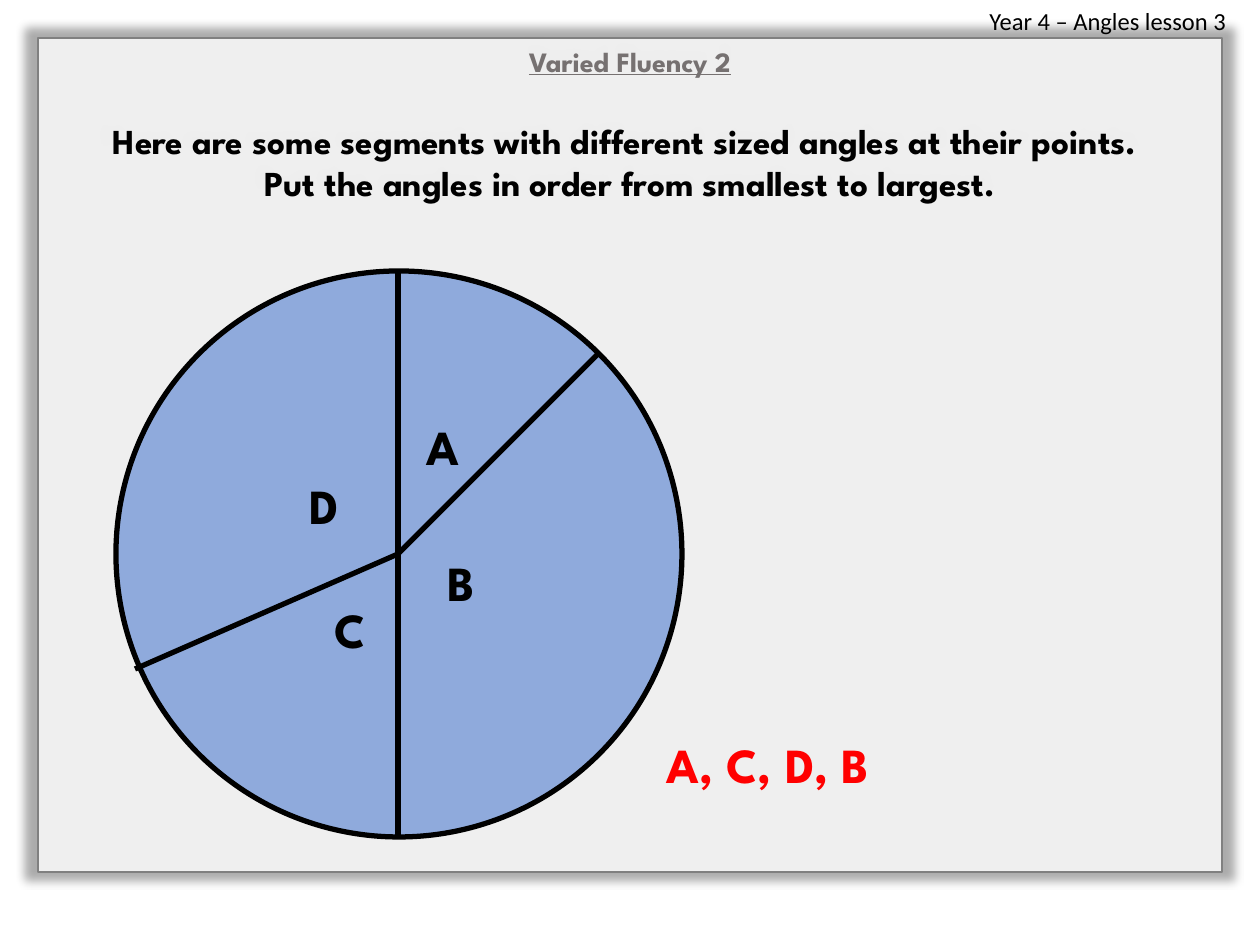
from lxml import etree
from pptx import Presentation
from pptx.dml.color import RGBColor
from pptx.enum.shapes import MSO_CONNECTOR, MSO_SHAPE
from pptx.enum.text import MSO_ANCHOR, PP_ALIGN
from pptx.oxml import parse_xml
from pptx.oxml.ns import nsdecls, qn
from pptx.util import Pt

PX = 914400 / 126
FONT = "League Spartan"


def px(*values):
    """Turn pixel lengths into a list of EMU lengths."""
    return [round(v * PX) for v in values]


def add_run(p, text, size, color, font=FONT, bold=True, underline=False):
    r = p.add_run()
    r.text = text
    r.font.size = Pt(size)
    r.font.name = font
    r.font.bold = bold
    r.font.underline = underline
    r.font.color.rgb = RGBColor.from_string(color)


prs = Presentation()
prs.slide_width, prs.slide_height = px(1260, 945)
s = prs.slides.add_slide(prs.slide_layouts[6])

# Lesson header
header = s.shapes.add_textbox(*px(977, 0, 272, 43))
header.text_frame.word_wrap = False
add_run(header.text_frame.paragraphs[0], "Year 4 – Angles lesson 3", 14, "000000",
        font="Calibri", bold=False)

# Translucent panel with a soft shadow, holding the title and question
panel = s.shapes.add_shape(MSO_SHAPE.RECTANGLE, *px(38, 38, 1184, 834))
panel.fill.solid()
panel.fill.fore_color.rgb = RGBColor.from_string("FFFFFF")
color = panel._element.spPr.find(qn("a:solidFill"))[0]
etree.SubElement(color, qn("a:alpha")).set("val", "82000")
panel.line.color.rgb = RGBColor.from_string("808080")
panel.line.width = Pt(1)
panel._element.spPr.append(parse_xml(
    f'<a:effectLst {nsdecls("a")}><a:outerShdw blurRad="63500" sx="102000" sy="102000" '
    'algn="ctr" rotWithShape="0"><a:srgbClr val="000000"><a:alpha val="40000"/>'
    '</a:srgbClr></a:outerShdw></a:effectLst>'))
tf = panel.text_frame
tf.word_wrap = True
tf.vertical_anchor = MSO_ANCHOR.TOP
title = tf.paragraphs[0]
question = tf.add_paragraph()
question.space_before = Pt(24)
task = tf.add_paragraph()
for p in tf.paragraphs:
    p.alignment = PP_ALIGN.CENTER
add_run(title, "Varied Fluency 2", 16, "767171", underline=True)
add_run(question, "Here are some segments with different sized angles at their points. ",
        20, "000000")
add_run(task, "Put the angles in order from smallest to largest.", 20, "000000")

# Circle cut into four segments
circle = s.shapes.add_shape(MSO_SHAPE.OVAL, *px(116, 271, 566, 566))
circle.shadow.inherit = False
circle.fill.solid()
circle.fill.fore_color.rgb = RGBColor.from_string("8FAADC")
circle.line.color.rgb = RGBColor.from_string("000000")
circle.line.width = Pt(3)

for x, y in [(398, 271), (598, 354), (398, 837), (135, 669)]:
    radius = s.shapes.add_connector(MSO_CONNECTOR.STRAIGHT, *px(x, y, 398, 554))
    radius.line.color.rgb = RGBColor.from_string("000000")
    radius.line.width = Pt(3)
    etree.SubElement(radius._element.spPr, qn("a:effectLst"))

for letter, x, y in [("A", 375, 410), ("C", 282, 593), ("B", 393, 546), ("D", 256, 469)]:
    label = s.shapes.add_textbox(*px(x, y, 136, 72))
    tf = label.text_frame
    tf.word_wrap = True
    tf.vertical_anchor = MSO_ANCHOR.MIDDLE
    p = tf.paragraphs[0]
    p.alignment = PP_ALIGN.CENTER
    add_run(p, letter, 28, "000000")

# Answer
answer = s.shapes.add_textbox(*px(654, 728, 248, 72))
answer.text_frame.word_wrap = False
add_run(answer.text_frame.paragraphs[0], "A, C, D, B", 28, "FF0000")

prs.save("out.pptx")
